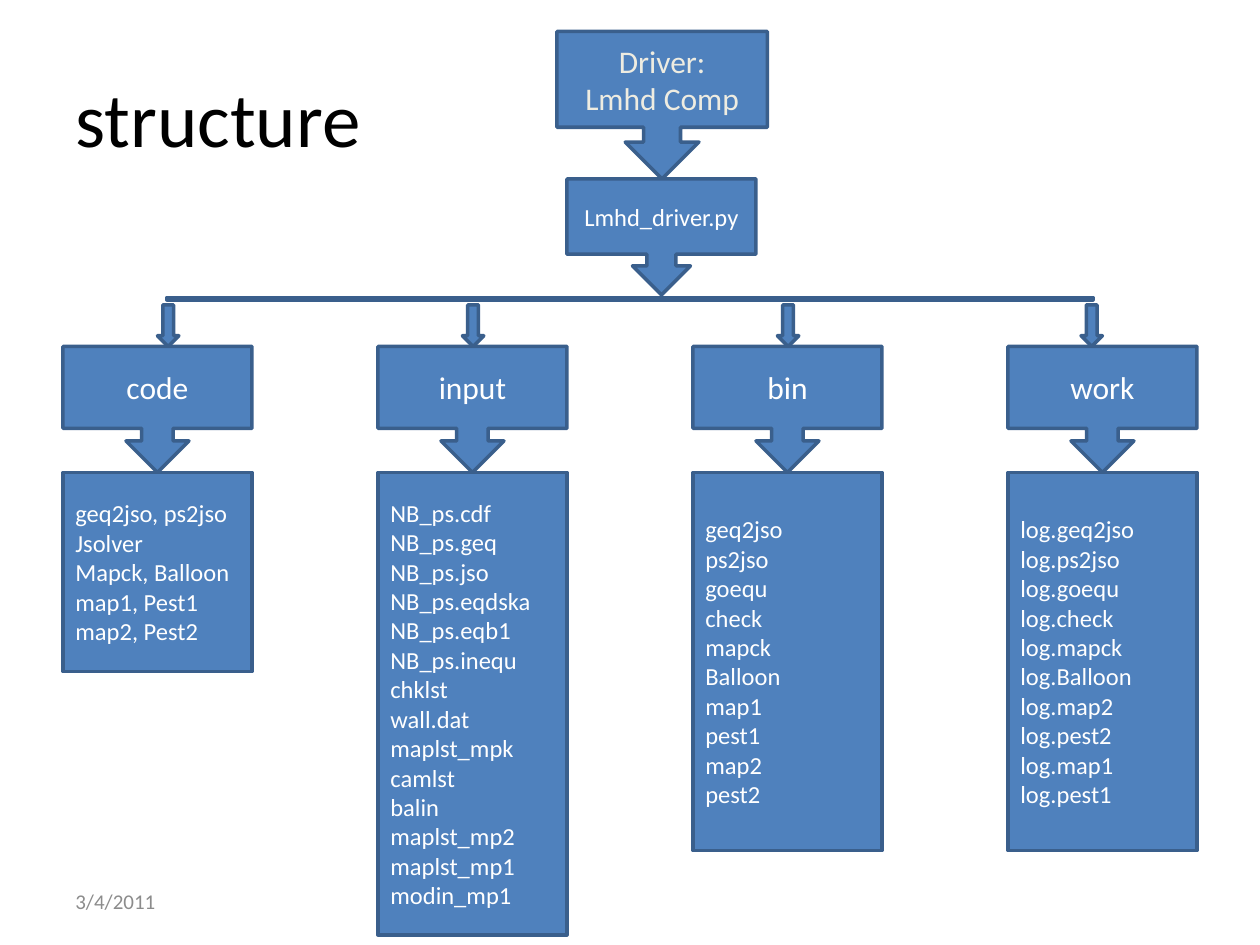
from pptx import Presentation
from pptx.dml.color import RGBColor
from pptx.enum.shapes import MSO_SHAPE as Shape
from pptx.enum.text import MSO_ANCHOR as Anchor, PP_ALIGN as Align
from pptx.util import Inches, Pt

COLORS = {"fill": "4F81BD", "line": "3A5F8C", "cream": "EEECE1",
          "white": "FFFFFF", "black": "000000", "gray": "8C8C8C"}

FOLDERS = [
    ("code", 1.25, 1.58, ["geq2jso, ps2jso", "Jsolver", "Mapck, Balloon",
                          "map1, Pest1", "map2, Pest2"]),
    ("input", 3.67, 3.67, ["NB_ps.cdf", "NB_ps.geq", "NB_ps.jso", "NB_ps.eqdska",
                           "NB_ps.eqb1", "NB_ps.inequ", "chklst",
                           "wall.dat maplst_mpk", "camlst", "balin",
                           "maplst_mp2", "maplst_mp1", "modin_mp1"]),
    ("bin", 6.17, 3, ["geq2jso", "ps2jso", "goequ", "check", "mapck",
                      "Balloon", "map1", "pest1", "map2", "pest2"]),
    ("work", 8.58, 3, ["log.geq2jso", "log.ps2jso", "log.goequ", "log.check",
                       "log.mapck", "log.Balloon", "log.map2", "log.pest2",
                       "log.map1", "log.pest1"]),
]


def color(name):
    """Return the named colour."""
    return RGBColor.from_string(COLORS[name])


def write(shape, lines, size=14, ink="white", align=Align.LEFT):
    """Fill a shape with one formatted paragraph per line."""
    frame = shape.text_frame
    frame.word_wrap = True
    frame.vertical_anchor = Anchor.MIDDLE
    for index, line in enumerate(lines):
        para = frame.add_paragraph() if index else frame.paragraphs[0]
        para.alignment = align
        span = para.add_run()
        span.text = line
        span.font.name = "Calibri"
        span.font.size = Pt(size)
        span.font.color.rgb = color(ink)


def add_block(page, kind, left, top, width, height):
    """Add a filled, outlined preset shape."""
    block = page.shapes.add_shape(kind, Inches(left), Inches(top),
                                  Inches(width), Inches(height))
    block.shadow.inherit = False
    block.fill.solid()
    block.fill.fore_color.rgb = color("fill")
    block.line.color.rgb = color("line")
    block.line.width = Pt(2)
    return block


def add_callout(page, lines, left, top, width, height, **style):
    """Add a centred label box that points down."""
    callout = add_block(page, Shape.DOWN_ARROW_CALLOUT, left, top, width, height)
    write(callout, lines, align=Align.CENTER, **style)


def add_heading(page, left, top, width, height):
    """Place the slide title."""
    title = page.shapes.title
    title.left, title.top = Inches(left), Inches(top)
    title.width, title.height = Inches(width), Inches(height)
    write(title, ["structure"], size=44, ink="black")


def add_driver(page, center, top):
    """Stack the two driver callouts around a centre line."""
    add_callout(page, ["Driver:", "Lmhd Comp"], center - 0.83, top, 1.67, 1.17,
                size=18, ink="cream")
    add_callout(page, ["Lmhd_driver.py"], center - 0.75, top + 1.17, 1.5, 0.92)


def add_folder(page, name, files, left, top, width, height):
    """Add a folder callout above its list of files."""
    add_callout(page, [name], left, top, width, 1, size=18)
    listing = add_block(page, Shape.RECTANGLE, left, top + 1, width, height)
    write(listing, files)


def add_folders(page, left, top, width, pitch):
    """Add the branch bar, its arrows and the row of folders."""
    add_block(page, Shape.MATH_MINUS, 0, top - 0.42, 10, 0.08)
    for index, (name, arrow_left, height, files) in enumerate(FOLDERS):
        add_folder(page, name, files, left + index * pitch, top, width, height)
        add_block(page, Shape.DOWN_ARROW, arrow_left, top - 0.33, 0.17, 0.33)


def add_date(page, left, top, width, height):
    """Add the date at the foot of the slide."""
    box = page.shapes.add_textbox(Inches(left), Inches(top),
                                  Inches(width), Inches(height))
    write(box, ["3/4/2011"], size=12, ink="gray")


def main():
    """Build and save the slide."""
    deck = Presentation()
    deck.slide_width, deck.slide_height = Inches(10), Inches(7.5)
    page = deck.slides.add_slide(deck.slide_layouts[5])
    add_heading(page, 0.5, 0.3, 9, 1.25)
    add_driver(page, 5.25, 0.25)
    add_folders(page, 0.5, 2.75, 1.5, 2.5)
    add_date(page, 0.5, 6.95, 2.33, 0.4)
    deck.save("out.pptx")


if __name__ == "__main__":
    main()
